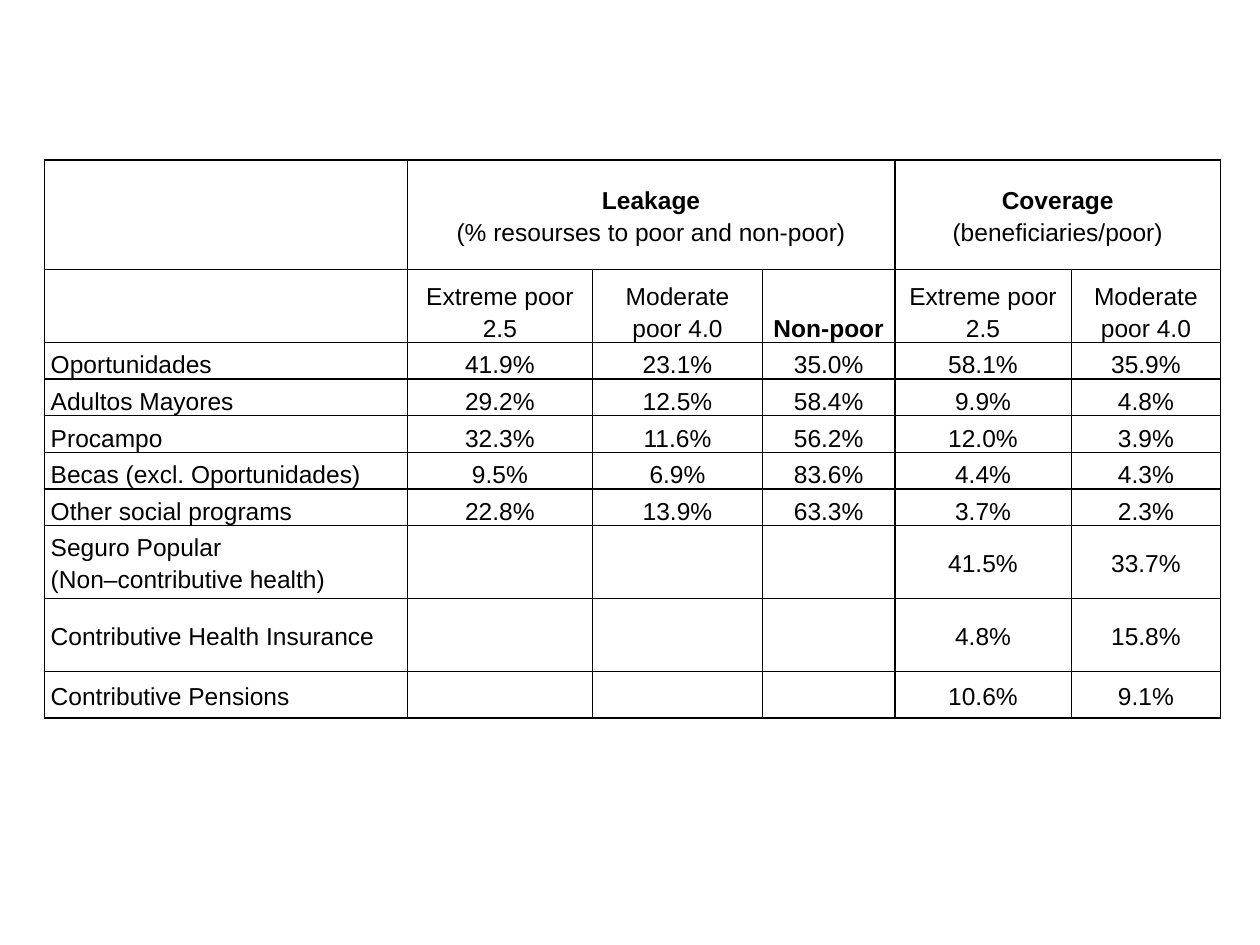
from lxml import etree
from pptx import Presentation
from pptx.dml.color import RGBColor
from pptx.enum import text
from pptx.oxml import ns
from pptx.util import Pt

COLORS = {"ink": "000000"}
COLUMN_WIDTHS = [207.4, 105.8, 97.2, 75.6, 100.8, 85.4]
ROW_HEIGHTS = [62.6, 41.8] + [20.9] * 5 + [41.8, 41.8, 26.6]
GROUPS = ["", "Leakage\n(% resourses to poor and non-poor)", "", "",
          "Coverage\n(beneficiaries/poor)", ""]
POVERTY_LINES = ["Extreme poor 2.5", "Moderate poor 4.0"]
MEASURES = ["", *POVERTY_LINES, "Non-poor", *POVERTY_LINES]
PROGRAMS = [
    ["Oportunidades", "41.9%", "23.1%", "35.0%", "58.1%", "35.9%"],
    ["Adultos Mayores", "29.2%", "12.5%", "58.4%", "9.9%", "4.8%"],
    ["Procampo", "32.3%", "11.6%", "56.2%", "12.0%", "3.9%"],
    ["Becas (excl. Oportunidades)", "9.5%", "6.9%", "83.6%", "4.4%", "4.3%"],
    ["Other social programs", "22.8%", "13.9%", "63.3%", "3.7%", "2.3%"],
    ["Seguro Popular\n(Non–contributive health)", "", "", "", "41.5%", "33.7%"],
    ["Contributive Health Insurance", "", "", "", "4.8%", "15.8%"],
    ["Contributive Pensions", "", "", "", "10.6%", "9.1%"],
]
BOLD = {"Leakage", "Coverage", "Non-poor"}
BOTTOM_ROWS = range(1, 7)


def add_borders(cell):
    properties = cell._tc.get_or_add_tcPr()
    for side in ("lnL", "lnR", "lnT", "lnB"):
        line = etree.SubElement(properties, ns.qn(f"a:{side}"), w=str(Pt(1)))
        fill = etree.SubElement(line, ns.qn("a:solidFill"))
        etree.SubElement(fill, ns.qn("a:srgbClr"), val=COLORS["ink"])


def format_cell(cell, content, alignment, anchor):
    cell.text = content
    cell.vertical_anchor = anchor
    cell.margin_left = cell.margin_right = Pt(3.6)
    cell.margin_top = cell.margin_bottom = 0
    add_borders(cell)
    cell.fill.background()
    for paragraph in cell.text_frame.paragraphs:
        paragraph.alignment = alignment
        paragraph.line_spacing = 1.15
        paragraph.font.name = "Arial"
        paragraph.font.size = Pt(14)
        paragraph.font.bold = paragraph.text in BOLD
        paragraph.font.color.rgb = RGBColor.from_string(COLORS["ink"])


def add_program_table(slide, left, top):
    """Compare leakage and coverage of the social programs."""
    rows = [GROUPS, MEASURES, *PROGRAMS]
    table = slide.shapes.add_table(
        len(rows), len(COLUMN_WIDTHS), left, top,
        Pt(sum(COLUMN_WIDTHS)), Pt(sum(ROW_HEIGHTS))).table
    table.first_row = table.horz_banding = False
    for column, width in zip(table.columns, COLUMN_WIDTHS):
        column.width = Pt(width)
    for row, height in zip(table.rows, ROW_HEIGHTS):
        row.height = Pt(height)
    for r, row in enumerate(rows):
        anchor = (text.MSO_ANCHOR.BOTTOM if r in BOTTOM_ROWS
                  else text.MSO_ANCHOR.MIDDLE)
        for c, content in enumerate(row):
            alignment = text.PP_ALIGN.CENTER if c else text.PP_ALIGN.LEFT
            format_cell(table.cell(r, c), content, alignment, anchor)
    for first, last in ((1, 3), (4, 5)):
        table.cell(0, first).merge(table.cell(0, last))


def main():
    deck = Presentation()
    deck.slide_width, deck.slide_height = Pt(720), Pt(540)
    slide = deck.slides.add_slide(deck.slide_layouts[6])
    add_program_table(slide, Pt(25.4), Pt(91.4))
    deck.save("out.pptx")


if __name__ == "__main__":
    main()
